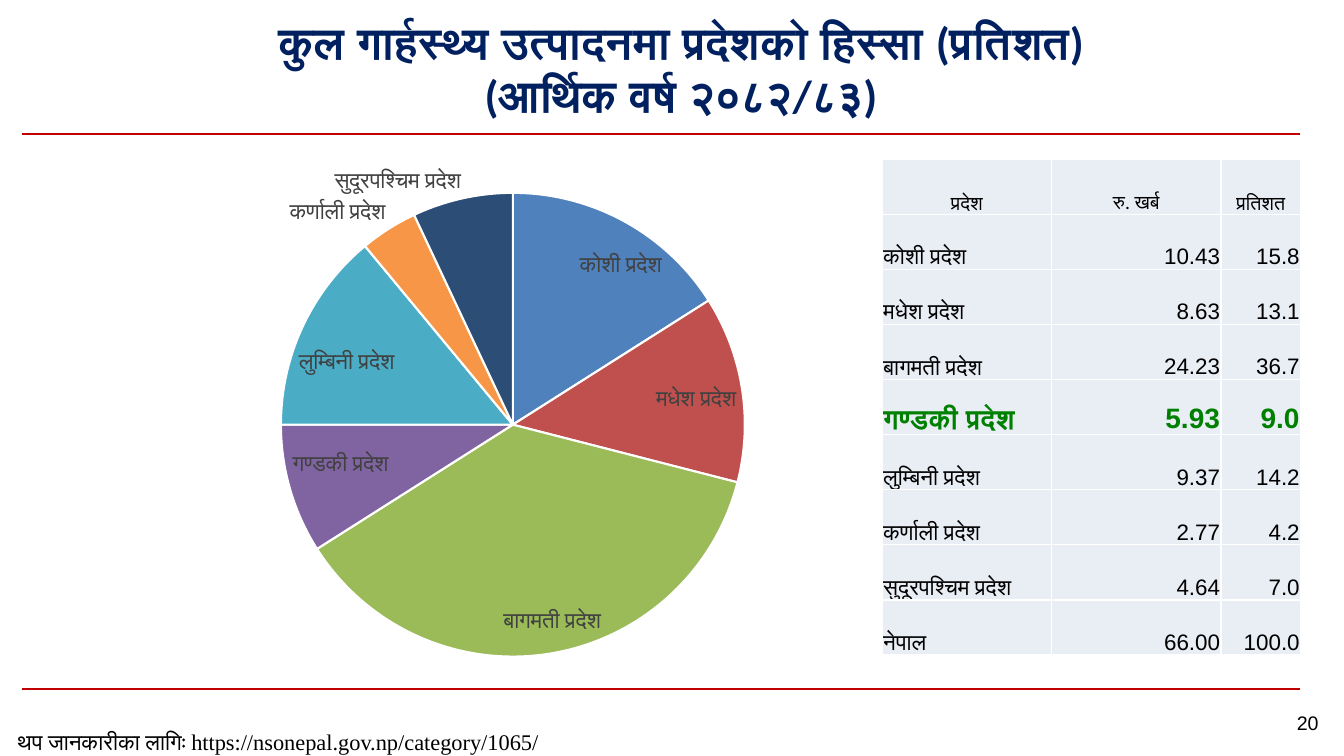
from lxml import etree
from pptx import Presentation
from pptx.chart.data import CategoryChartData
from pptx.dml.color import RGBColor
from pptx.enum.chart import XL_CHART_TYPE, XL_LABEL_POSITION
from pptx.enum.shapes import MSO_CONNECTOR
from pptx.enum.text import MSO_ANCHOR, PP_ALIGN
from pptx.oxml import parse_xml
from pptx.oxml.ns import nsdecls, qn
from pptx.util import Inches, Pt

PIE = XL_CHART_TYPE.PIE
BEST = XL_LABEL_POSITION.BEST_FIT
STRAIGHT = MSO_CONNECTOR.STRAIGHT
TOP, MIDDLE, BOTTOM = MSO_ANCHOR.TOP, MSO_ANCHOR.MIDDLE, MSO_ANCHOR.BOTTOM
LEFT, CENTER, RIGHT = PP_ALIGN.LEFT, PP_ALIGN.CENTER, PP_ALIGN.RIGHT

COLORS = {
    "rule": "C00000", "title": "002060", "text": "000000", "label": "404040",
    "focus": "008000", "cell": "E9EDF4", "white": "FFFFFF",
}
SLICES = ["4F81BD", "C0504D", "9BBB59", "8064A2", "4BACC6", "F79646", "2C4D75"]
HEADS = ["प्रदेश", "रु. खर्ब", "प्रतिशत"]
SHARES = [
    ("कोशी प्रदेश", 10.43, 15.8),
    ("मधेश प्रदेश", 8.63, 13.1),
    ("बागमती प्रदेश", 24.23, 36.7),
    ("गण्डकी प्रदेश", 5.93, 9.0),
    ("लुम्बिनी प्रदेश", 9.37, 14.2),
    ("कर्णाली प्रदेश", 2.77, 4.2),
    ("सुदूरपश्चिम प्रदेश", 4.64, 7.0),
]
TOTAL = ("नेपाल", 66.0, 100.0)
FOCUS = "गण्डकी प्रदेश"


def rgb(name):
    return RGBColor.from_string(COLORS[name])


def style(font, face, size, color, bold=False):
    font.name, font.size, font.bold = face, Pt(size), bold
    font.color.rgb = rgb(color)


def add_run(para, text, *look):
    run = para.add_run()
    run.text = text
    style(run.font, *look)


def add_text(slide, box, lines, look, align=LEFT, anchor=TOP):
    """Places one text box with a paragraph for each line."""
    frame = slide.shapes.add_textbox(*map(Inches, box)).text_frame
    frame.word_wrap = True
    frame.vertical_anchor = anchor
    for i, line in enumerate(lines):
        para = frame.add_paragraph() if i else frame.paragraphs[0]
        para.alignment = align
        add_run(para, line, *look)
    return frame


def add_title(slide, box):
    lines = ["कुल गार्हस्थ्य उत्पादनमा प्रदेशको हिस्सा (प्रतिशत)", "(आर्थिक वर्ष २०८२/८३)"]
    frame = add_text(slide, box, lines, ("Calibri", 32, "title", True), CENTER, MIDDLE)
    frame.margin_top, frame.margin_bottom = 0, Inches(0.18)


def add_rule(slide, left, top, width):
    x, y, end = Inches(left), Inches(top), Inches(left + width)
    rule = slide.shapes.add_connector(STRAIGHT, x, y, end, y)
    rule.line.color.rgb = rgb("rule")
    rule.line.width = Pt(1.5)
    etree.SubElement(rule._element.spPr, qn("a:effectLst"))


def set_plot(chart, x, y, w, h):
    """Fixes the pie's place as fractions of the chart."""
    area = chart._chartSpace.chart.plotArea
    for old in area.findall(qn("c:layout")):
        area.remove(old)
    parts = "".join(f'<c:{k} val="{v}"/>' for k, v in zip("xywh", (x, y, w, h)))
    area.insert(0, parse_xml(
        f'<c:layout {nsdecls("c")}><c:manualLayout><c:layoutTarget val="inner"/>'
        f'<c:xMode val="edge"/><c:yMode val="edge"/>{parts}'
        '</c:manualLayout></c:layout>'))


def add_pie(slide, box):
    data = CategoryChartData(number_format="0.0")
    data.categories = [name for name, _, _ in SHARES]
    data.add_series("Series 1", [round(share) for _, _, share in SHARES])
    chart = slide.shapes.add_chart(PIE, *map(Inches, box), data).chart
    chart.has_title = chart.has_legend = False
    style(chart.font, "Calibri", 16, "text")
    set_plot(chart, 0.26, 0.08, 0.49, 0.89)
    plot = chart.plots[0]
    plot.vary_by_categories = True
    for i, color in enumerate(SLICES):
        part = plot.series[0].points[i].format
        part.fill.solid()
        part.fill.fore_color.rgb = RGBColor.from_string(color)
        part.line.color.rgb = rgb("white")
        part.line.width = Pt(1.5)
    plot.has_data_labels = True
    labels = plot.data_labels
    labels.show_category_name = True
    labels.show_value = labels.show_percentage = False
    labels.number_format, labels.number_format_is_linked = "0.0", False
    labels.position = BEST
    style(labels.font, "Calibri", 16, "label")


def fill_cell(cell, text, align, look):
    cell.margin_left = cell.margin_right = cell.margin_top = Inches(0.01)
    cell.margin_bottom = 0
    cell.vertical_anchor = BOTTOM
    para = cell.text_frame.paragraphs[0]
    para.alignment = align
    add_run(para, text, *look)
    props = cell._tc.get_or_add_tcPr()
    for side in ("lnL", "lnR", "lnT", "lnB"):
        props.append(parse_xml(
            f'<a:{side} {nsdecls("a")} w="12700"><a:solidFill>'
            f'<a:srgbClr val="{COLORS["white"]}"/></a:solidFill></a:{side}>'))
    cell.fill.solid()
    cell.fill.fore_color.rgb = rgb("cell")


def add_shares(slide, box):
    rows = SHARES + [TOTAL]
    count = len(rows) + 1
    table = slide.shapes.add_table(count, len(HEADS), *map(Inches, box)).table
    table.first_row = table.horz_banding = False
    for col, width in zip(table.columns, (1.68, 1.68, 0.79)):
        col.width = Inches(width)
    for row in table.rows:
        row.height = Inches(box[3] / count)
    for c, head in enumerate(HEADS):
        fill_cell(table.cell(0, c), head, CENTER, ("Calibri", 14, "text"))
    for r, (name, amount, share) in enumerate(rows, 1):
        look = (20, "focus", True) if name == FOCUS else (16, "text")
        fill_cell(table.cell(r, 0), name, LEFT, ("Calibri", *look))
        for c, text in enumerate((f"{amount:.2f}", f"{share:.1f}"), 1):
            fill_cell(table.cell(r, c), text, RIGHT, ("Arial", *look))


def main():
    deck = Presentation()
    deck.slide_width, deck.slide_height = Inches(13.33), Inches(7.5)
    slide = deck.slides.add_slide(deck.slide_layouts[6])
    for top in (1.33, 6.84):
        add_rule(slide, 0.22, top, 12.67)
    add_title(slide, (1.17, 0.25, 11.17, 1.03))
    add_text(slide, (12.67, 7, 0.6, 0.33), ["20"], ("Arial", 14, "text"), CENTER)
    add_text(slide, (0.08, 7.17, 6.17, 0.33),
             ["थप जानकारीका लागिः https://nsonepal.gov.np/category/1065/"],
             ("Times New Roman", 16, "text"))
    add_pie(slide, (0.33, 1.5, 9.42, 5.17))
    add_shares(slide, (8.75, 1.58, 4.15, 4.92))
    deck.save("out.pptx")


if __name__ == "__main__":
    main()
